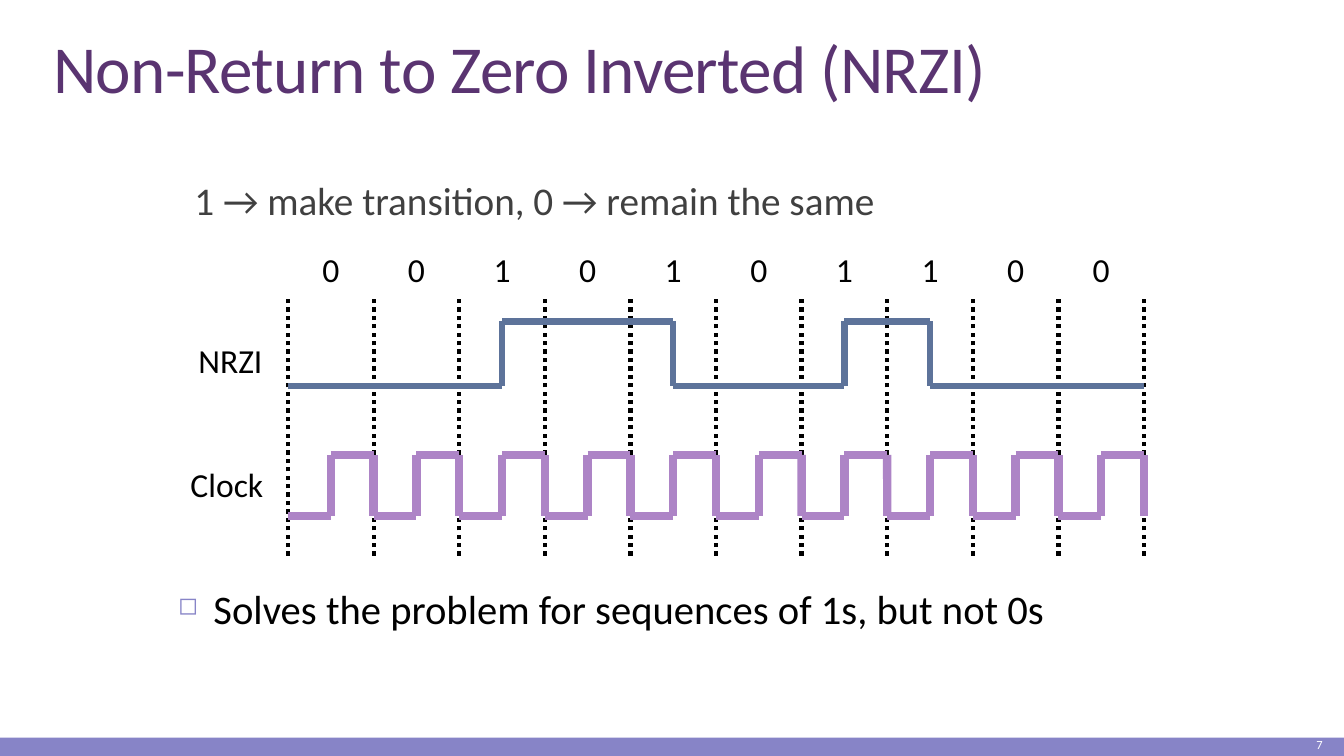
from lxml import etree
from pptx import Presentation
from pptx import util as u
from pptx.dml.color import RGBColor
from pptx.enum import dml, shapes, text
from pptx.oxml import ns

PLUM = RGBColor(0x5A, 0x34, 0x71)
PERIWINKLE = RGBColor(0x87, 0x84, 0xC7)
LILAC = RGBColor(0xAD, 0x84, 0xC6)
SLATE = RGBColor(0x5D, 0x73, 0x9A)
GREY = RGBColor(0x40, 0x40, 0x40)
BLACK = RGBColor(0, 0, 0)
WHITE = RGBColor(0xFF, 0xFF, 0xFF)

BITS = "0010101100"
LEFT, RIGHT = 7.26, 28.83
BIT_WIDTH = (RIGHT - LEFT) / len(BITS)

deck = Presentation()
deck.slide_width, deck.slide_height = u.Cm(33.87), u.Cm(19.05)
slide = deck.slides.add_slide(deck.slide_layouts[6])


def add_text(words, left, top, width, height, size, color, wrap=True,
             anchor=text.MSO_ANCHOR.TOP, align=text.PP_ALIGN.LEFT):
    box = slide.shapes.add_textbox(u.Cm(left), u.Cm(top), u.Cm(width), u.Cm(height))
    frame = box.text_frame
    frame.word_wrap = wrap
    frame.vertical_anchor = anchor
    frame.text = words
    paragraph = frame.paragraphs[0]
    paragraph.alignment = align
    font = paragraph.runs[0].font
    font.name, font.size, font.color.rgb = "Calibri", u.Pt(size), color
    return frame


def add_trace(points, color, weight, dash=None):
    for (x1, y1), (x2, y2) in zip(points, points[1:]):
        segment = slide.shapes.add_connector(
            shapes.MSO_CONNECTOR.STRAIGHT, u.Cm(x1), u.Cm(y1), u.Cm(x2), u.Cm(y2))
        segment.line.color.rgb = color
        segment.line.width = u.Pt(weight)
        segment.line.dash_style = dash
        etree.SubElement(segment._element.spPr, ns.qn("a:effectLst"))


# Footer band and page number
band = slide.shapes.add_shape(shapes.MSO_SHAPE.RECTANGLE, 0, u.Cm(18.59),
                              deck.slide_width, u.Cm(0.46))
band.shadow.inherit = False
band.fill.solid()
band.fill.fore_color.rgb = PERIWINKLE
band.line.fill.background()
add_text("7", 29.95, 18.49, 3.63, 0.56, 8.9, WHITE,
         anchor=text.MSO_ANCHOR.MIDDLE, align=text.PP_ALIGN.RIGHT)

# Title
title = add_text("Non-Return to Zero Inverted (NRZI)", 1.09, 0.79, 32.11, 2.03, 48, PLUM,
                 anchor=text.MSO_ANCHOR.BOTTOM).paragraphs[0]
title.line_spacing = 0.85
title.runs[0].font._element.set("spc", "-50")

# Encoding rule
rule = add_text("1 → make transition, 0 → remain the same", 4.65, 4.45, 24.56, 1.7, 28, GREY)
rule.margin_left, rule.margin_right = u.Cm(0.25), 0
rule.paragraphs[0].line_spacing = 0.9

# Bit boundaries
for i in range(len(BITS) + 1):
    x = LEFT + i * BIT_WIDTH
    add_trace([(x, 14), (x, 7.44)], BLACK, 3, dml.MSO_LINE.ROUND_DOT)

# Bit values, clock and NRZI signal, both switching in the middle of a bit
CLOCK_LOW, CLOCK_HIGH = 13, 11.46
NRZI_LOW, NRZI_HIGH = 9.73, 8.1
clock = []
level = NRZI_LOW
nrzi = [(LEFT, level)]
for i, bit in enumerate(BITS):
    start = LEFT + i * BIT_WIDTH
    middle, end = start + BIT_WIDTH / 2, start + BIT_WIDTH
    add_text(bit, middle - 0.5, 6.15, 1, 1.27, 24, BLACK, wrap=False,
             align=text.PP_ALIGN.CENTER)
    clock += [(start, CLOCK_LOW), (middle, CLOCK_LOW), (middle, CLOCK_HIGH), (end, CLOCK_HIGH)]
    if bit == "1":
        nrzi.append((middle, level))
        level = NRZI_LOW + NRZI_HIGH - level
        nrzi.append((middle, level))
clock.append((RIGHT, CLOCK_LOW))
nrzi.append((RIGHT, level))
add_trace(clock, LILAC, 6)
add_trace(nrzi, SLATE, 4.5)

# Signal names
add_text("NRZI", 4.75, 8.43, 2.13, 1.27, 24, BLACK, wrap=False)
add_text("Clock", 4.55, 11.56, 2.36, 1.27, 24, BLACK, wrap=False)

# Conclusion with a square bullet
conclusion = add_text("Solves the problem for sequences of 1s, but not 0s",
                      4.24, 14.58, 25.4, 1.7, 29, BLACK).paragraphs[0]
properties = conclusion._p.get_or_add_pPr()
properties.set("marL", str(u.Cm(0.89)))
properties.set("indent", str(-u.Cm(0.89)))
bullet_color = etree.SubElement(properties, ns.qn("a:buClr"))
etree.SubElement(bullet_color, ns.qn("a:srgbClr"), val=str(PERIWINKLE))
etree.SubElement(properties, ns.qn("a:buSzPct"), val="60000")
etree.SubElement(properties, ns.qn("a:buChar"), char="◻")

deck.save("out.pptx")
